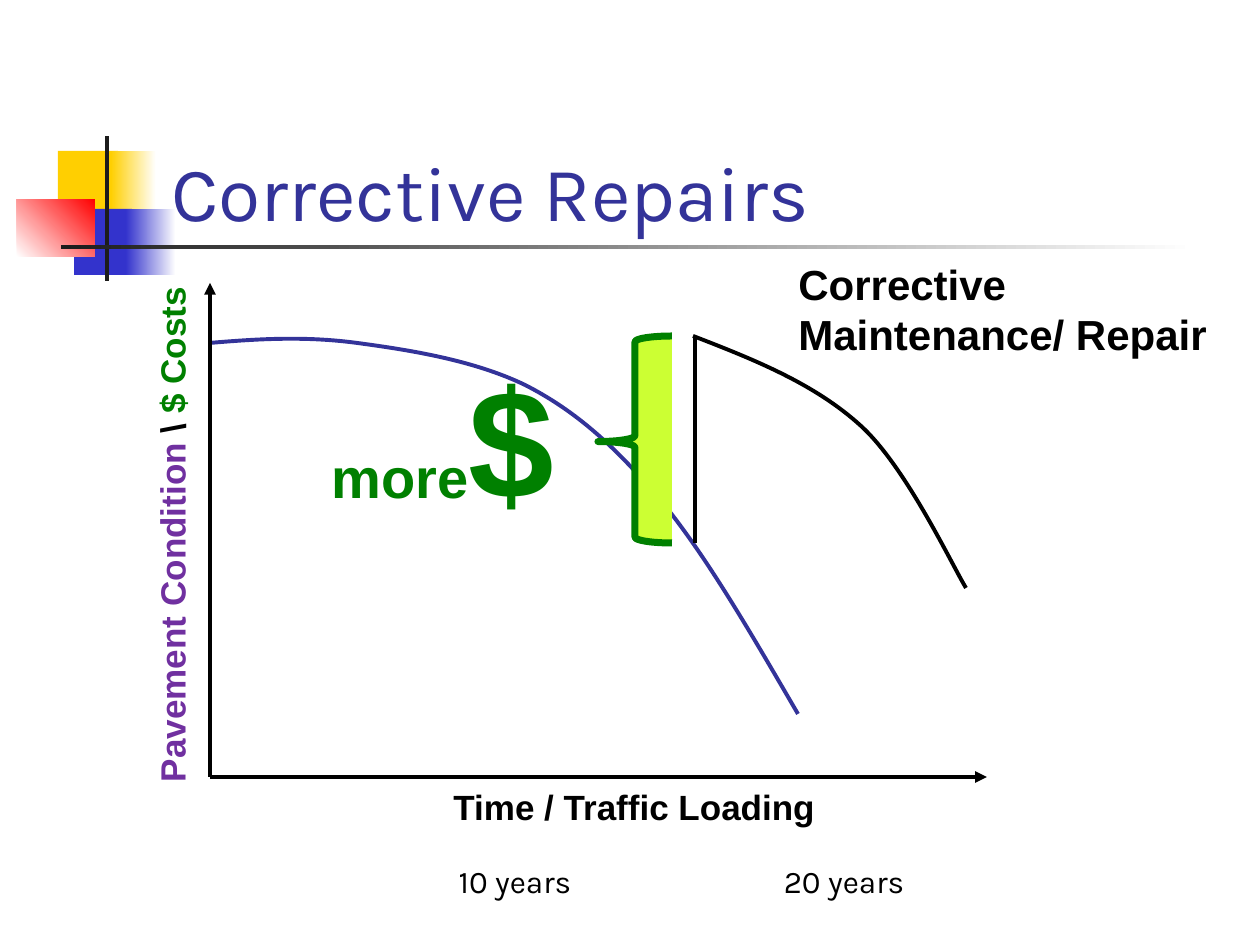
from typing import NamedTuple

from lxml.etree import SubElement
from pptx import Presentation
from pptx.dml.color import RGBColor
from pptx.enum.shapes import MSO_CONNECTOR, MSO_SHAPE
from pptx.enum.text import MSO_ANCHOR, MSO_AUTO_SIZE, PP_ALIGN
from pptx.oxml.ns import qn
from pptx.util import Pt

PX = 914400 / 126
BLACK, GREEN, PURPLE, INDIGO = "000000", "008000", "7030A0", "333399"
YELLOW, BLUE, RED, WHITE, CHARCOAL = "FFCF01", "3333CC", "FF0000", "FFFFFF", "1C1C1C"


class Box(NamedTuple):
    left: int
    top: int
    width: int
    height: int


class Ornament(NamedTuple):
    box: Box
    start: str
    end: str = ""
    angle: int = 0


class Piece(NamedTuple):
    text: str
    color: str = BLACK
    size: int = 0


class Label(NamedTuple):
    box: Box
    lines: list[list[Piece]]
    size: int
    font: str = "Arial"
    bold: bool = True
    align: PP_ALIGN = PP_ALIGN.LEFT
    rotation: int = 0
    wrap: bool = False


class Segment(NamedTuple):
    start: tuple[int, int]
    end: tuple[int, int]
    arrow: bool = False


class Curve(NamedTuple):
    points: list[tuple[int, int]]
    color: str


ORNAMENTS = [
    Ornament(Box(58, 151, 60, 65), YELLOW),
    Ornament(Box(111, 151, 45, 65), YELLOW, WHITE),
    Ornament(Box(74, 209, 58, 66), BLUE),
    Ornament(Box(126, 209, 50, 66), BLUE, WHITE),
    Ornament(Box(17, 199, 78, 58), WHITE, RED, 45),
    Ornament(Box(105, 136, 4, 145), CHARCOAL),
    Ornament(Box(61, 245, 1134, 4), CHARCOAL, WHITE),
]
DETERIORATION = Curve(
    [(210, 343), (257, 339), (305, 336), (357, 343), (409, 350), (473, 360), (525, 385),
     (576, 411), (616, 447), (662, 502), (707, 557), (752, 635), (798, 714)], INDIGO)
AFTER_REPAIR = Curve(
    [(693, 336), (755, 360), (815, 384), (861, 426), (906, 467), (952, 565), (966, 588)], BLACK)
REPAIR_JUMP = Segment((695, 543), (695, 336))
AXES = [
    Segment((210, 777), (210, 283), True),
    Segment((210, 777), (987, 777), True),
]
REPAIR_LABEL = Label(Box(786, 252, 438, 115),
                     [[Piece("Corrective")], [Piece("Maintenance/ Repair")]], 24)
CONDITION_LABEL = Label(
    Box(-95, 500, 534, 55),
    [[Piece("Pavement Condition ", PURPLE), Piece("\\ "), Piece("$ Costs", GREEN)]],
    20, rotation=270)
COST_LABEL = Label(Box(316, 338, 251, 199), [[Piece("more", GREEN), Piece("$", GREEN, 88)]],
                   32, align=PP_ALIGN.RIGHT)
TIME_LABEL = Label(Box(441, 779, 403, 55), [[Piece("Time / Traffic Loading")]], 20)
YEAR_LABELS = [
    Label(Box(left, 856, 168, 50), [[Piece(years)]], 18, "Karla", False,
          PP_ALIGN.CENTER, wrap=True)
    for left, years in [(760, "20 years"), (431, "10 years")]
]


def emu(*lengths: int) -> list[int]:
    return [round(length * PX) for length in lengths]


def rgb(color: str) -> RGBColor:
    return RGBColor.from_string(color)


def draw_ornament(shapes, ornament: Ornament) -> None:
    block = shapes.add_shape(MSO_SHAPE.RECTANGLE, *emu(*ornament.box))
    block.shadow.inherit = False
    block.line.fill.background()
    if ornament.end:
        block.fill.gradient()
        block.fill.gradient_angle = ornament.angle
        for stop, color in zip(block.fill.gradient_stops, (ornament.start, ornament.end)):
            stop.color.rgb = rgb(color)
    else:
        block.fill.solid()
        block.fill.fore_color.rgb = rgb(ornament.start)


def draw_segment(shapes, segment: Segment) -> None:
    line = shapes.add_connector(MSO_CONNECTOR.STRAIGHT, *emu(*segment.start, *segment.end))
    line.line.color.rgb = rgb(BLACK)
    line.line.width = Pt(2.25)
    if segment.arrow:
        SubElement(line.line._get_or_add_ln(), qn("a:tailEnd"), type="triangle")
    SubElement(line.element.spPr, qn("a:effectLst"))


def draw_curve(shapes, curve: Curve) -> None:
    builder = shapes.build_freeform(*curve.points[0], scale=PX)
    builder.add_line_segments(curve.points[1:], close=False)
    outline = builder.convert_to_shape()
    outline.shadow.inherit = False
    outline.fill.background()
    outline.line.color.rgb = rgb(curve.color)
    outline.line.width = Pt(2.25)
    steps = list(outline.element.iter(qn("a:lnTo")))
    track = steps[0].getparent()
    for first in range(0, len(steps), 3):
        bezier = SubElement(track, qn("a:cubicBezTo"))
        for step in steps[first:first + 3]:
            bezier.append(step[0])
            track.remove(step)


def draw_label(shapes, label: Label) -> None:
    caption = shapes.add_textbox(*emu(*label.box))
    caption.rotation = label.rotation
    frame = caption.text_frame
    frame.word_wrap = label.wrap
    frame.auto_size = MSO_AUTO_SIZE.SHAPE_TO_FIT_TEXT
    for index, pieces in enumerate(label.lines):
        paragraph = frame.add_paragraph() if index else frame.paragraphs[0]
        paragraph.alignment = label.align
        paragraph.font.name = label.font
        paragraph.font.size = Pt(label.size)
        paragraph.font.bold = label.bold
        for piece in pieces:
            run = paragraph.add_run()
            run.text = piece.text
            run.font.color.rgb = rgb(piece.color)
            if piece.size:
                run.font.size = Pt(piece.size)


def draw_title(title, text: str) -> None:
    title.left, title.top, title.width, title.height = emu(159, 86, 1074, 157)
    frame = title.text_frame
    frame.text = text
    frame.auto_size = MSO_AUTO_SIZE.NONE
    frame.vertical_anchor = MSO_ANCHOR.BOTTOM
    heading = frame.paragraphs[0]
    heading.alignment = PP_ALIGN.LEFT
    heading.font.name = "Karla"
    heading.font.size = Pt(44)
    heading.font.color.rgb = rgb(INDIGO)


def draw_brace(shapes, box: Box) -> None:
    brace = shapes.add_shape(MSO_SHAPE.LEFT_BRACE, *emu(*box))
    brace.shadow.inherit = False
    brace.adjustments[0], brace.adjustments[1] = 0.08, 0.51
    brace.fill.solid()
    brace.fill.fore_color.rgb = rgb("CCFF33")
    brace.line.color.rgb = rgb(GREEN)
    brace.line.width = Pt(4)


def main() -> None:
    deck = Presentation()
    deck.slide_width, deck.slide_height = emu(1260, 945)
    slide = deck.slides.add_slide(deck.slide_layouts[5])
    shapes = slide.shapes
    for ornament in ORNAMENTS:
        draw_ornament(shapes, ornament)
    draw_curve(shapes, DETERIORATION)
    for axis in AXES:
        draw_segment(shapes, axis)
    repair = shapes.add_group_shape().shapes
    draw_segment(repair, REPAIR_JUMP)
    draw_curve(repair, AFTER_REPAIR)
    draw_label(repair, REPAIR_LABEL)
    draw_label(shapes, CONDITION_LABEL)
    draw_title(shapes.title, "Corrective Repairs")
    shapes[-1].element.addnext(shapes.title.element)
    draw_brace(shapes, Box(598, 336, 74, 207))
    for label in [COST_LABEL, TIME_LABEL, *YEAR_LABELS]:
        draw_label(shapes, label)
    deck.save("out.pptx")


if __name__ == "__main__":
    main()
